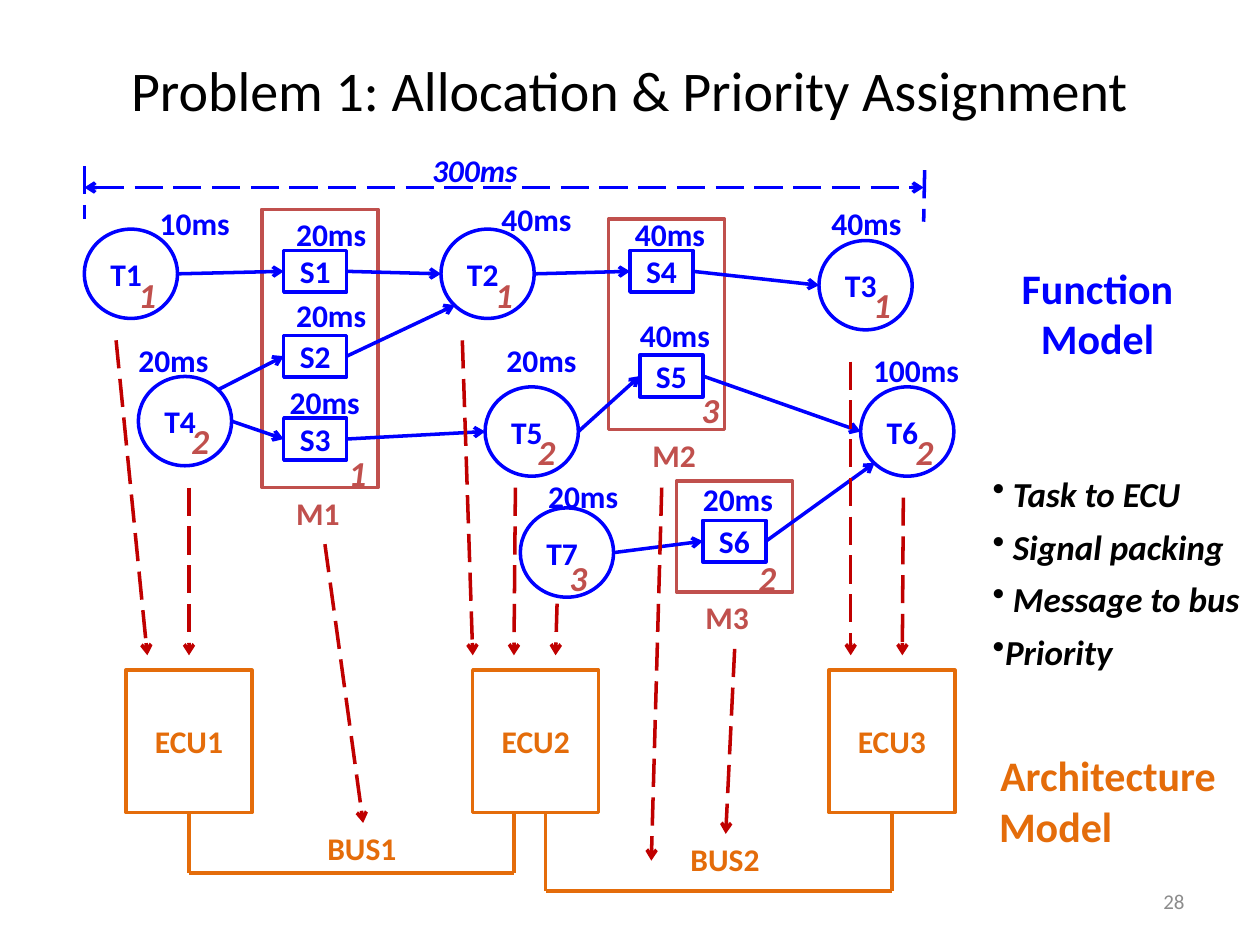
from dataclasses import dataclass

from lxml import etree
from pptx import Presentation
from pptx.dml.color import RGBColor
from pptx.enum.dml import MSO_LINE
from pptx.enum.shapes import MSO_CONNECTOR, MSO_SHAPE
from pptx.enum.text import MSO_ANCHOR, MSO_AUTO_SIZE, PP_ALIGN
from pptx.oxml.ns import qn
from pptx.util import Cm, Pt

ELLIPSE, RECTANGLE = MSO_SHAPE.OVAL, MSO_SHAPE.RECTANGLE
STRAIGHT, LONG_DASH = MSO_CONNECTOR.STRAIGHT, MSO_LINE.LONG_DASH
LEFT, CENTER, RIGHT = PP_ALIGN.LEFT, PP_ALIGN.CENTER, PP_ALIGN.RIGHT
TOP, MIDDLE = MSO_ANCHOR.TOP, MSO_ANCHOR.MIDDLE
FIT_SHAPE, NO_FIT = MSO_AUTO_SIZE.SHAPE_TO_FIT_TEXT, MSO_AUTO_SIZE.NONE


@dataclass(frozen=True)
class Theme:
    font: str = "Calibri"
    function: RGBColor = RGBColor(0x00, 0x00, 0xFF)
    message: RGBColor = RGBColor(0xC0, 0x50, 0x4D)
    mapping: RGBColor = RGBColor(0xC0, 0x00, 0x00)
    architecture: RGBColor = RGBColor(0xE4, 0x6C, 0x0A)
    ink: RGBColor = RGBColor(0x00, 0x00, 0x00)
    muted: RGBColor = RGBColor(0x8C, 0x8C, 0x8C)
    title: Pt = Pt(32)
    heading: Pt = Pt(24)
    emphasis: Pt = Pt(20)
    label: Pt = Pt(18)
    footer: Pt = Pt(12)
    stroke: Pt = Pt(2)


THEME = Theme()

deck = Presentation()
deck.slide_width, deck.slide_height = Cm(25.4), Cm(19.05)
slide = deck.slides.add_slide(deck.slide_layouts[6])


def write(shape, lines, color, size=THEME.label, bold=True, italic=False, aligns=(LEFT,),
          word_wrap=False, vertical_anchor=TOP, auto_size=FIT_SHAPE):
    """Fill a shape with paragraphs; the last alignment serves all further lines."""
    frame = shape.text_frame
    frame_format = {"word_wrap": word_wrap, "vertical_anchor": vertical_anchor,
                    "auto_size": auto_size}
    for name, value in frame_format.items():
        setattr(frame, name, value)
    font_format = {"name": THEME.font, "size": size, "bold": bold, "italic": italic}
    for i, line in enumerate(lines):
        paragraph = frame.add_paragraph() if i else frame.paragraphs[0]
        paragraph.alignment = aligns[min(i, len(aligns) - 1)]
        run = paragraph.add_run()
        run.text = line
        for name, value in font_format.items():
            setattr(run.font, name, value)
        run.font.color.rgb = color


def draw_line(x1, y1, x2, y2, color, dash=None, arrows=()):
    """Draw a line in cm; arrows names the ends (headEnd, tailEnd) that get a point."""
    connector = slide.shapes.add_connector(STRAIGHT, Cm(x1), Cm(y1), Cm(x2), Cm(y2))
    connector.line.color.rgb = color
    connector.line.width = THEME.stroke
    if dash:
        connector.line.dash_style = dash
    properties = connector._element.spPr
    for end in arrows:
        etree.SubElement(properties.find(qn("a:ln")), qn(f"a:{end}"), type="arrow")
    etree.SubElement(properties, qn("a:effectLst"))


# Name, left, top, then period and its place, then priority and its place
tasks = [
    ("T1", 1.70, 4.62, "10ms", 2.97, 3.99, "1", 2.54, 5.38),
    ("T2", 8.89, 4.62, "40ms", 9.86, 3.91, "1", 9.73, 5.38),
    ("T3", 16.51, 4.85, "40ms", 16.51, 3.99, "1", 17.35, 5.59),
    ("T4", 2.79, 7.59, "20ms", 2.54, 6.76, "2", 3.61, 8.33),
    ("T5", 9.78, 7.80, "20ms", 9.96, 6.76, "2", 10.59, 8.56),
    ("T6", 17.35, 7.80, "100ms", 17.35, 6.96, "2", 18.21, 8.56),
    ("T7", 10.49, 10.24, "20ms", 10.80, 9.50, "3", 11.23, 11.10),
]
signals = [
    ("S1", 5.72, 5.05, "20ms", 5.72, 4.22),
    ("S2", 5.72, 6.76, "20ms", 5.72, 5.84),
    ("S3", 5.72, 8.43, "20ms", 5.59, 7.59),
    ("S4", 12.70, 5.05, "40ms", 12.55, 4.22),
    ("S5", 12.90, 7.16, "40ms", 12.65, 6.25),
    ("S6", 14.17, 10.49, "20ms", 13.92, 9.55),
]
# Name, left, top, height, label left, then priority and its place
messages = [
    ("M1", 5.28, 4.22, 5.61, 5.72, "1", 6.78, 8.97),
    ("M2", 12.27, 4.42, 4.24, 12.90, "3", 13.89, 7.70),
    ("M3", 13.64, 9.70, 2.24, 13.97, "2", 15.04, 11.10),
]

# Tasks, signals and control units: outline and name
nodes = {name: (x, y, 1.88, 1.80) for name, x, y, *_ in tasks}
nodes |= {name: (x, y, 1.27, 0.84) for name, x, y, *_ in signals}
nodes |= {f"ECU{i}": (x, 13.51, 2.54, 2.87) for i, x in enumerate((2.54, 9.53, 16.71), 1)}
outlines = [(name, ELLIPSE if name[0] == "T" else RECTANGLE,
             THEME.architecture if name[0] == "E" else THEME.function, box)
            for name, box in nodes.items()]
outlines += [("", RECTANGLE, THEME.message, (x, y, 2.34, height))
             for _, x, y, height, *_ in messages]
for name, kind, color, box in outlines:
    shape = slide.shapes.add_shape(kind, *map(Cm, box))
    shape.shadow.inherit = False
    shape.fill.background()
    shape.line.color.rgb = color
    shape.line.width = THEME.stroke
    if name:
        is_task = kind == ELLIPSE
        write(shape, [name], color, aligns=(LEFT if is_task else CENTER,),
              word_wrap=not is_task, vertical_anchor=MIDDLE, auto_size=NO_FIT)

# Data flow: ends are given as fractions of each node's width and height
LEFT_SIDE, RIGHT_SIDE = (0, 0.5), (1, 0.5)
UPPER_RIGHT, LOWER_LEFT = (0.85, 0.15), (0.15, 0.85)
flows = [
    ("T1", "S1", RIGHT_SIDE, LEFT_SIDE), ("S1", "T2", RIGHT_SIDE, LEFT_SIDE),
    ("T2", "S4", RIGHT_SIDE, LEFT_SIDE), ("S4", "T3", RIGHT_SIDE, LEFT_SIDE),
    ("T4", "S2", UPPER_RIGHT, LEFT_SIDE), ("S2", "T2", RIGHT_SIDE, LOWER_LEFT),
    ("T4", "S3", RIGHT_SIDE, LEFT_SIDE), ("S3", "T5", RIGHT_SIDE, LEFT_SIDE),
    ("T5", "S5", RIGHT_SIDE, LEFT_SIDE), ("S5", "T6", RIGHT_SIDE, LEFT_SIDE),
    ("T7", "S6", RIGHT_SIDE, LEFT_SIDE), ("S6", "T6", RIGHT_SIDE, LOWER_LEFT),
]
for source, target, *sides in flows:
    ends = []
    for node, (across, down) in zip((source, target), sides):
        x, y, width, height = nodes[node]
        ends += [x + across * width, y + down * height]
    draw_line(*ends, THEME.function, arrows=["tailEnd"])

# Allocation of tasks to control units and of messages to buses
UNIT_ARROW_END = 13.21
allocations = [(x1, y1, x2, UNIT_ARROW_END) for x1, y1, x2 in [
    (2.34, 6.86, 2.97), (3.81, 9.83, 3.81), (9.32, 6.86, 9.53), (10.39, 9.83, 10.36),
    (11.23, 12.17, 11.20), (17.15, 7.29, 17.15), (18.21, 10.03, 18.19)]]
allocations += [(6.55, 10.97, 7.32, 16.59), (13.34, 9.83, 13.13, 17.35),
                (14.81, 13.08, 14.63, 16.81)]
for ends in allocations:
    draw_line(*ends, THEME.mapping, LONG_DASH, ["tailEnd"])

# End-to-end deadline
draw_line(1.70, 3.35, 1.70, 4.42, THEME.function, LONG_DASH)
draw_line(18.64, 3.43, 18.62, 4.47, THEME.function, LONG_DASH)
draw_line(1.70, 3.78, 18.62, 3.78, THEME.function, LONG_DASH, ["headEnd", "tailEnd"])

# Buses
UNIT_BOTTOM = 16.38
for left, right, level in [(3.81, 10.36, 17.60), (11.00, 17.98, 17.96)]:
    draw_line(left, level, right, level, THEME.architecture)
    for x in (left, right):
        draw_line(x, UNIT_BOTTOM, x, level, THEME.architecture)

# Captions: text, place, width, colour
captions = [(period, x, y, 2.26 if len(period) > 4 else 1.93, THEME.function)
            for _, _, _, period, x, y, *_ in tasks + signals]
captions += [(name, x, top + height, 1.40, THEME.message)
             for name, _, top, height, x, *_ in messages]
captions += [("BUS1", 6.35, 16.59, 1.93, THEME.architecture),
             ("BUS2", 13.67, 16.81, 1.93, THEME.architecture)]
for caption, x, y, width, color in captions:
    write(slide.shapes.add_textbox(Cm(x), Cm(y), Cm(width), Cm(1.02)), [caption], color)

for *_, priority, x, y in tasks + messages:
    write(slide.shapes.add_textbox(Cm(x), Cm(y), Cm(0.86), Cm(1.12)), [priority],
          THEME.message, THEME.emphasis, italic=True)

# Title, headings, design questions and slide number
decisions = [" Task to ECU", " Signal packing", " Message to bus", "Priority"]
texts = [
    ((1.27, 0.20, 22.86, 3.18), ["Problem 1: Allocation & Priority Assignment"],
     dict(color=THEME.ink, size=THEME.title, bold=False, aligns=(CENTER,),
          word_wrap=True, vertical_anchor=MIDDLE, auto_size=NO_FIT)),
    ((8.46, 2.92, 2.41, 1.02), ["300ms"], dict(color=THEME.function, italic=True)),
    ((20.32, 5.16, 3.61, 2.31), ["Function", "Model"],
     dict(color=THEME.function, size=THEME.heading, aligns=(CENTER,))),
    ((19.89, 14.99, 4.90, 2.31), ["Architecture", "Model"],
     dict(color=THEME.architecture, size=THEME.heading, aligns=(CENTER, LEFT))),
    ((18.21, 17.65, 5.92, 1.02), ["28"],
     dict(color=THEME.muted, size=THEME.footer, bold=False, aligns=(RIGHT,),
          word_wrap=True, vertical_anchor=MIDDLE, auto_size=NO_FIT)),
    ((19.76, 9.40, 5.64, 4.32), decisions,
     dict(color=THEME.ink, size=THEME.emphasis, italic=True, word_wrap=True)),
]
for box, lines, style in texts:
    text_box = slide.shapes.add_textbox(*map(Cm, box))
    write(text_box, lines, **style)
    if lines is decisions:
        for paragraph in text_box.text_frame.paragraphs:
            paragraph.space_before = Pt(6)
            etree.SubElement(paragraph._p.get_or_add_pPr(), qn("a:buChar"), char="•")

deck.save("out.pptx")
